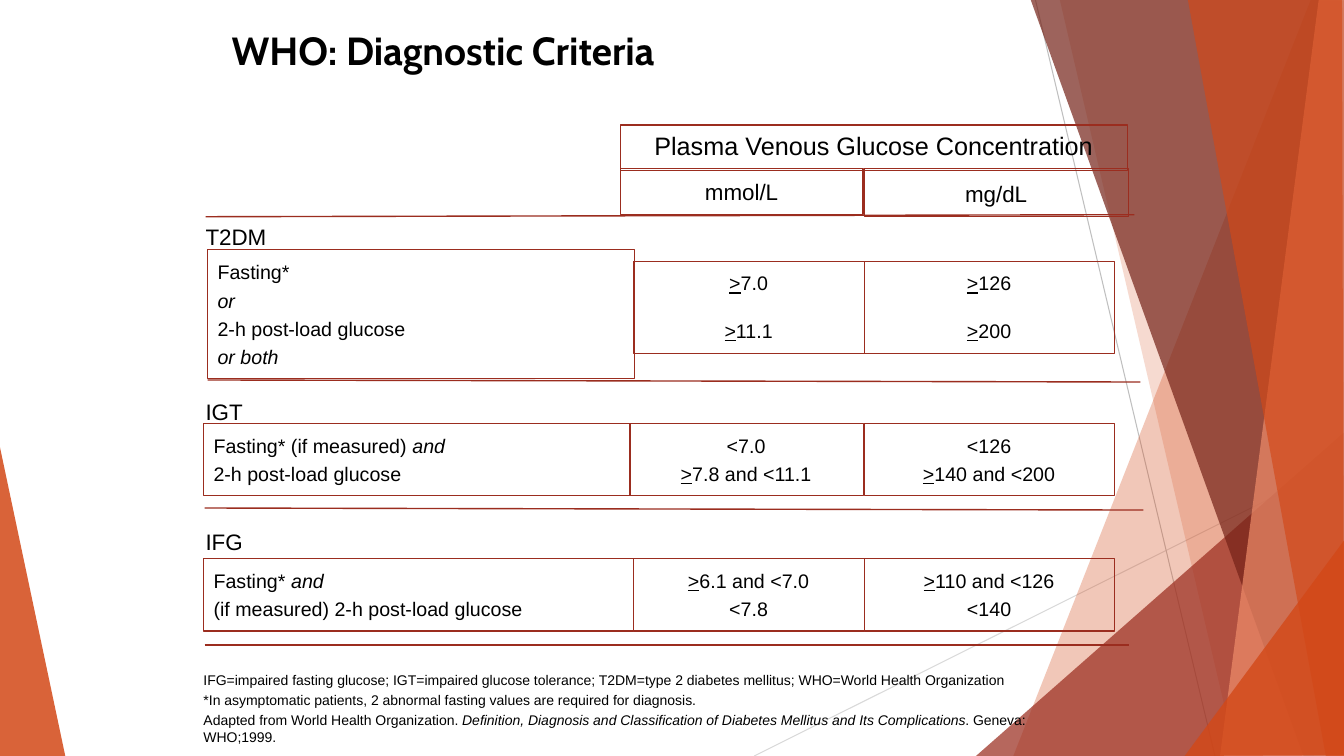
from lxml import etree
from pptx import Presentation
from pptx.dml.color import RGBColor
from pptx.enum.shapes import MSO_CONNECTOR, MSO_SHAPE
from pptx.enum.text import MSO_ANCHOR, PP_ALIGN
from pptx.oxml.ns import qn
from pptx.util import Pt

PX = 9144  # EMU per px, 100 px to the inch
LEFT, CENTER = PP_ALIGN.LEFT, PP_ALIGN.CENTER
TOP, MIDDLE, BOTTOM = MSO_ANCHOR.TOP, MSO_ANCHOR.MIDDLE, MSO_ANCHOR.BOTTOM
RECTANGLE, STRAIGHT = MSO_SHAPE.RECTANGLE, MSO_CONNECTOR.STRAIGHT

THEME = {
    "text": "000000", "rule": "9B2D1F", "orange": "D34817", "red": "9B2D1F",
    "maroon": "742217", "salmon": "EF8C6A", "pale": "D9D9D9", "gray": "BFBFBF",
    "title_font": "Cabin", "body_font": "Arial",
    "title": 28, "heading": 18, "label": 16, "cell": 14, "note": 10,
}

deck = Presentation()
deck.slide_width, deck.slide_height = 1333 * PX, 750 * PX
page = deck.slides.add_slide(deck.slide_layouts[6])


def add_text(place, paragraphs, size, align=LEFT, anchor=TOP, gap=0,
             outlined=False, font="body_font", bold=False, wrap=True, inset=10):
    """Each paragraph is a string: ~ toggles italic, _ toggles underline."""
    left, top, width, height = (value * PX for value in place)
    if outlined:
        box = page.shapes.add_shape(RECTANGLE, left, top, width, height)
        box.shadow.inherit = False
        box.fill.background()
        box.line.color.rgb = RGBColor.from_string(THEME["rule"])
        box.line.width = Pt(0.75)
    else:
        box = page.shapes.add_textbox(left, top, width, height)
    frame = box.text_frame
    frame.word_wrap = wrap
    frame.vertical_anchor = anchor
    frame.margin_left = frame.margin_right = 10 * PX
    frame.margin_top = frame.margin_bottom = inset * PX
    for index, text in enumerate(paragraphs):
        para = frame.add_paragraph() if index else frame.paragraphs[0]
        para.alignment = align
        if index:
            para.space_before = Pt(gap)
        for i, slanted in enumerate(text.split("~")):
            for j, piece in enumerate(slanted.split("_")):
                if not piece:
                    continue
                span = para.add_run()
                span.text = piece
                span.font.name = THEME[font]
                span.font.size = Pt(THEME[size])
                span.font.color.rgb = RGBColor.from_string(THEME["text"])
                span.font.bold = bold
                span.font.italic = i % 2 == 1
                span.font.underline = j % 2 == 1


def add_line(ends, color, weight):
    line = page.shapes.add_connector(STRAIGHT, *(value * PX for value in ends))
    line.line.color.rgb = RGBColor.from_string(THEME[color])
    line.line.width = Pt(weight)
    etree.SubElement(line._element.spPr, qn("a:effectLst"))


# Thin background lines
add_line((748, 750, 1335, 457), "pale", 0.75)
add_line((1027, 0, 1205, 750), "gray", 0.75)

# Translucent facets: colour, opacity in percent, corners
facets = [
    ("orange", 85, [(-1, 439), (65, 751), (-1, 750)]),
    ("orange", 30, [(1300, 0), (1005, 750), (1336, 751), (1335, 1)]),
    ("orange", 20, [(1051, -1), (1226, 750), (1335, 750), (1335, -1)]),
    ("red", 72, [(968, 750), (1333, 429), (1334, 750)]),
    ("maroon", 70, [(1022, -1), (1293, 750), (1335, 749), (1335, -1)]),
    ("salmon", 70, [(1308, -1), (1210, 750), (1335, 750), (1334, -1)]),
    ("orange", 65, [(1178, -1), (1315, 750), (1333, 750), (1331, -1)]),
    ("orange", 80, [(1175, 750), (1334, 535), (1335, 749)]),
]
for color, opacity, corners in facets:
    builder = page.shapes.build_freeform(*corners[0], scale=PX)
    builder.add_line_segments(corners[1:], close=True)
    facet = builder.convert_to_shape()
    facet.shadow.inherit = False
    facet.line.fill.background()
    facet.fill.solid()
    facet.fill.fore_color.rgb = RGBColor.from_string(THEME[color])
    tint = facet._element.spPr.find(qn("a:solidFill"))[0]
    etree.SubElement(tint, qn("a:alpha"), val=str(opacity * 1000))

# Title
add_text((220, 16, 694, 67), ["WHO: Diagnostic Criteria"], "title",
         anchor=MIDDLE, font="title_font", bold=True)

# Column headings
headings = [
    ((615, 124, 503, 45), "Plasma Venous Glucose Concentration", "heading"),
    ((615, 167, 241, 46), "mmol/L", "label"),
    ((857, 167, 262, 48), "mg/dL", "label"),
]
for place, text, size in headings:
    add_text(place, [text], size, CENTER, BOTTOM, outlined=True)

# Section labels
for top, width, text in [(211, 81, "T2DM"), (385, 58, "IGT"), (514, 58, "IFG")]:
    add_text((194, top, width, 47), [text], "label", anchor=MIDDLE, wrap=False)

# Criteria cells: place, alignment, paragraph gap, lines
cells = [
    ((206, 248, 423, 128), LEFT, 3.5,
     ["Fasting*", "~or~", "2-h post-load glucose", "~or both~"]),
    ((628, 259, 229, 92), CENTER, 17, ["_>_7.0", "_>_11.1"]),
    ((857, 259, 248, 92), CENTER, 17, ["_>_126", "_>_200"]),
    ((202, 420, 423, 72), LEFT, 3.5,
     ["Fasting* (if measured) ~and~", "2-h post-load glucose"]),
    ((624, 420, 232, 72), CENTER, 3.5, ["<7.0", "_>_7.8 and <11.1"]),
    ((857, 420, 248, 72), CENTER, 3.5, ["<126", "_>_140 and <200"]),
    ((202, 554, 426, 72), LEFT, 3.5,
     ["Fasting* ~and~", "(if measured) 2-h post-load glucose"]),
    ((628, 554, 229, 72), CENTER, 3.5, ["_>_6.1 and <7.0", "<7.8"]),
    ((857, 554, 248, 72), CENTER, 3.5, ["_>_110 and <126", "<140"]),
]
for place, align, gap, lines in cells:
    add_text(place, lines, "cell", align, gap=gap, outlined=True)

# Section rules
for ends in [(204, 215, 1125, 213), (206, 377, 1131, 379),
             (203, 504, 1134, 506), (203, 640, 1120, 640)]:
    add_line(ends, "rule", 1)

# Footnotes
add_text((192, 661, 876, 84), [
    "IFG=impaired fasting glucose; IGT=impaired glucose tolerance; "
    "T2DM=type 2 diabetes mellitus; WHO=World Health Organization",
    "*In asymptomatic patients, 2 abnormal fasting values are required for diagnosis.",
    "Adapted from World Health Organization. ~Definition, Diagnosis and Classification "
    "of Diabetes Mellitus and Its Complications~. Geneva: WHO;1999.",
], "note", gap=2.5, inset=5)

deck.save("out.pptx")
